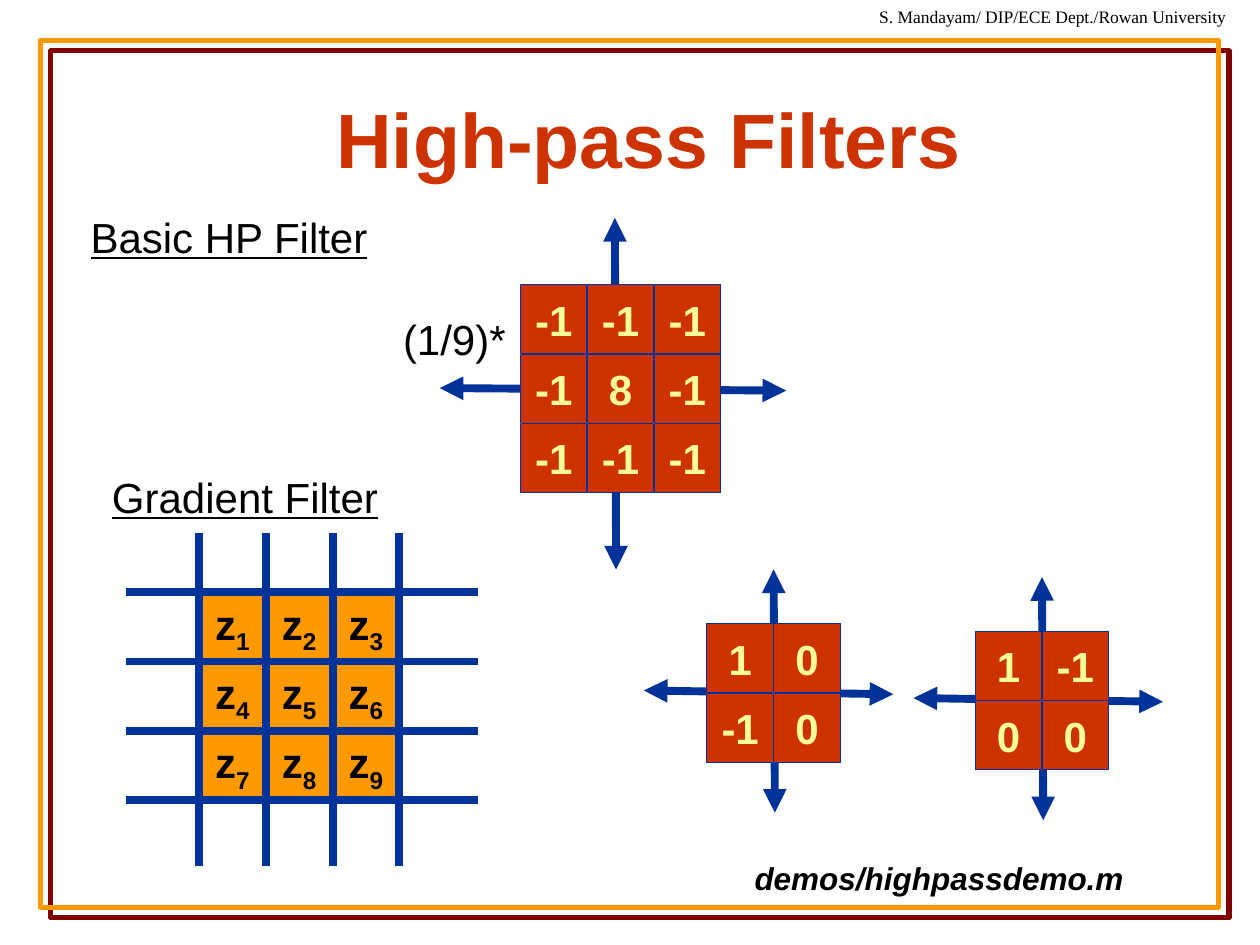
"""Build the High-pass Filters slide with its filter masks and pixel grid."""
import pptx
import pptx.util
import pptx.dml.color
import pptx.enum.shapes
import pptx.enum.text
import pptx.oxml
import pptx.oxml.ns
from pptx.util import Inches

THEME = {
    "title": "CC3300", "mask": "CC3300", "mask_text": "FFFF99", "pixel": "FF9900",
    "line": "003399", "frame": "FF9900", "shadow": "800000", "text": "000000",
    "font": "Arial", "credit_font": "Times New Roman",
    "title_size": 44, "body_size": 24, "demo_size": 18, "credit_size": 10,
    "thick": 4.5, "thin": 0.75, "frame_width": 3,
}
CELL_WIDTH, CELL_HEIGHT = 0.53, 0.55

TITLE = ("High-pass Filters", (0.9, 0.47, 8.5, 1.25))
LABELS = [
    ("S. Mandayam/ DIP/ECE Dept./Rowan University", (6.88, 0, 2.97, 0.27),
     {"size": "credit_size", "font": "credit_font"}),
    ("Basic HP Filter", (0.62, 1.63, 2.41, 0.5), {"underline": True}),
    ("(1/9)*", (3.1, 2.44, 1.02, 0.5), {}),
    ("Gradient Filter", (0.79, 3.69, 2.31, 0.5), {"underline": True}),
    ("demos/highpassdemo.m", (5.39, 6.77, 4.3, 0.4),
     {"size": "demo_size", "bold": True, "italic": True}),
]
MASKS = [
    {"origin": (4.13, 2.26), "rows": [["-1", "-1", "-1"], ["-1", "8", "-1"], ["-1", "-1", "-1"]],
     "axes": [(4.88, 1.73, 4.89, 4.52), (3.49, 3.08, 6.24, 3.1)]},
    {"origin": (5.61, 4.95), "rows": [["1", "0"], ["-1", "0"]],
     "axes": [(6.14, 4.52, 6.15, 6.45), (5.11, 5.48, 7.09, 5.51)]},
    {"origin": (7.74, 5.01), "rows": [["1", "-1"], ["0", "0"]],
     "axes": [(8.27, 4.58, 8.28, 6.51), (7.25, 5.54, 9.23, 5.57)]},
]
PIXELS = {"origin": (1.58, 4.7), "rows": [["z1", "z2", "z3"], ["z4", "z5", "z6"], ["z7", "z8", "z9"]],
          "across": (1, 3.79), "down": (4.23, 6.87)}


def color(name):
    return pptx.dml.color.RGBColor.from_string(THEME[name])


def add_xml(parent, body):
    namespace = pptx.oxml.ns.nsdecls("a")
    parent.append(pptx.oxml.parse_xml(body.replace("/>", f" {namespace}/>", 1)
                                      if body.endswith("/>") and body.count("<") == 1
                                      else body.replace(">", f" {namespace}>", 1)))


def format_run(run, size="body_size", font="font", fill="text", bold=False, italic=False, underline=False):
    run.font.size = pptx.util.Pt(THEME[size])
    run.font.name = THEME[font]
    run.font.color.rgb = color(fill)
    run.font.bold, run.font.italic, run.font.underline = bold, italic, underline


def set_line(shape, name, width):
    shape.line.color.rgb = color(name)
    shape.line.width = pptx.util.Pt(THEME[width])


def add_rectangle(slide, box):
    rectangle = pptx.enum.shapes.MSO_SHAPE.RECTANGLE
    shape = slide.shapes.add_shape(rectangle, *map(Inches, box))
    shape.shadow.inherit = False
    return shape


def add_line(slide, ends, arrows=False):
    straight = pptx.enum.shapes.MSO_CONNECTOR.STRAIGHT
    connector = slide.shapes.add_connector(straight, *map(Inches, ends))
    set_line(connector, "line", "thick")
    if arrows:
        for end in ("headEnd", "tailEnd"):
            add_xml(connector.line._get_or_add_ln(), f'<a:{end} type="triangle"/>')
    add_xml(connector._element.spPr, "<a:effectLst/>")


def add_cells(slide, origin, rows, fill, text_fill):
    for row, values in enumerate(rows):
        for column, value in enumerate(values):
            cell = add_rectangle(slide, (origin[0] + column * CELL_WIDTH, origin[1] + row * CELL_HEIGHT,
                                         CELL_WIDTH, CELL_HEIGHT))
            cell.fill.solid()
            cell.fill.fore_color.rgb = color(fill)
            set_line(cell, "line", "thin")
            frame = cell.text_frame
            frame.word_wrap = False
            frame.vertical_anchor = pptx.enum.text.MSO_ANCHOR.MIDDLE
            paragraph = frame.paragraphs[0]
            paragraph.alignment = pptx.enum.text.PP_ALIGN.CENTER
            parts = list(value) if value.startswith("z") else [value]
            for index, part in enumerate(parts):
                run = paragraph.add_run()
                run.text = part
                format_run(run, fill=text_fill, bold=True)
                if index:
                    run.font._element.set("baseline", "-25000")


def add_frame(slide):
    frame = add_rectangle(slide, (0.32, 0.32, 9.35, 6.88))
    frame.fill.background()
    set_line(frame, "frame", "frame_width")
    effects = frame._element.spPr.find(pptx.oxml.ns.qn("a:effectLst"))
    distance = pptx.util.Pt(8.5)
    add_xml(effects, f'<a:outerShdw dist="{distance}" dir="2700000" algn="ctr" rotWithShape="0">'
                     f'<a:srgbClr val="{THEME["shadow"]}"/></a:outerShdw>')


def add_title(slide):
    text, box = TITLE
    title = slide.shapes.title
    title.left, title.top, title.width, title.height = map(Inches, box)
    title.text_frame.text = text
    title.text_frame.vertical_anchor = pptx.enum.text.MSO_ANCHOR.MIDDLE
    paragraph = title.text_frame.paragraphs[0]
    paragraph.alignment = pptx.enum.text.PP_ALIGN.CENTER
    format_run(paragraph.runs[0], size="title_size", fill="title", bold=True)


def add_label(slide, text, box, style):
    label = slide.shapes.add_textbox(*map(Inches, box))
    frame = label.text_frame
    frame.text = text
    frame.word_wrap = "italic" in style
    frame.auto_size = pptx.enum.text.MSO_AUTO_SIZE.SHAPE_TO_FIT_TEXT
    paragraph = frame.paragraphs[0]
    format_run(paragraph.runs[0], **style)
    if "italic" in style:
        paragraph.level = 1
        properties = paragraph._p.get_or_add_pPr()
        properties.set("marL", str(Inches(0.5)))
        properties.set("indent", "0")


def add_pixel_grid(slide):
    left, top = PIXELS["origin"]
    add_cells(slide, PIXELS["origin"], PIXELS["rows"], "pixel", "text")
    for index in range(len(PIXELS["rows"]) + 1):
        x, y = left + index * CELL_WIDTH, top + index * CELL_HEIGHT
        add_line(slide, (PIXELS["across"][0], y, PIXELS["across"][1], y))
        add_line(slide, (x, PIXELS["down"][0], x, PIXELS["down"][1]))


def main():
    presentation = pptx.Presentation()
    presentation.slide_width, presentation.slide_height = Inches(10), Inches(7.5)
    slide = presentation.slides.add_slide(presentation.slide_layouts[5])
    add_frame(slide)
    add_title(slide)
    for mask in MASKS:
        for axis in mask["axes"]:
            add_line(slide, axis, arrows=True)
        add_cells(slide, mask["origin"], mask["rows"], "mask", "mask_text")
    add_pixel_grid(slide)
    for label in LABELS:
        add_label(slide, *label)
    presentation.save("out.pptx")


if __name__ == "__main__":
    main()
